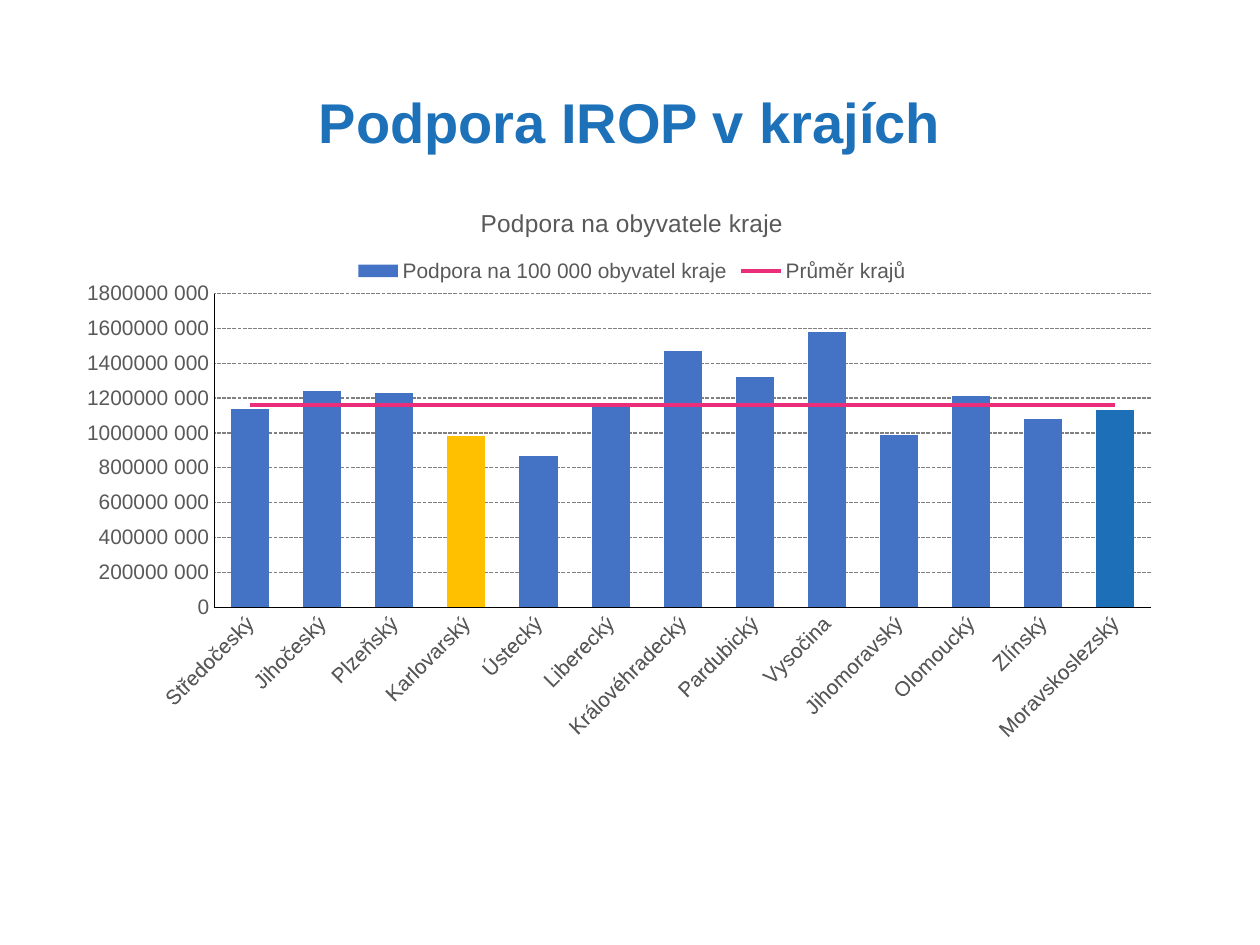
from pptx import Presentation
from pptx.chart.data import CategoryChartData
from pptx.dml.color import RGBColor
from pptx.enum.chart import XL_CHART_TYPE as CHART, XL_LEGEND_POSITION as LEGEND
from pptx.enum.chart import XL_MARKER_STYLE as MARKER, XL_TICK_MARK as TICK
from pptx.enum.dml import MSO_LINE
from pptx.enum.text import MSO_ANCHOR, PP_ALIGN
from pptx.oxml import parse_xml
from pptx.oxml.ns import nsdecls, qn
from pptx.util import Pt

PX = 914400 // 126
FONT = "Arial"
TITLE_BLUE = RGBColor(0x1D, 0x71, 0xB8)
BAR_BLUE = RGBColor(0x44, 0x72, 0xC4)
HOME_BLUE = RGBColor(0x1D, 0x70, 0xB8)
YELLOW = RGBColor(0xFF, 0xC0, 0x00)
PINK = RGBColor(0xEA, 0x2E, 0x7A)
TEXT_GRAY = RGBColor(0x59, 0x59, 0x59)
GRID_GRAY = RGBColor(0x80, 0x80, 0x80)
BLACK = RGBColor(0, 0, 0)

MILLION = 1_000_000
SUPPORT = {  # millions per 100 000 inhabitants
    "Středočeský": 1140, "Jihočeský": 1240, "Plzeňský": 1230,
    "Karlovarský": 980, "Ústecký": 870, "Liberecký": 1150,
    "Královéhradecký": 1470, "Pardubický": 1320, "Vysočina": 1580,
    "Jihomoravský": 990, "Olomoucký": 1210, "Zlínský": 1080,
    "Moravskoslezský": 1130,
}
AVERAGE = 1160
HIGHLIGHTS = {"Karlovarský": YELLOW, "Moravskoslezský": HOME_BLUE}


def set_font(font, size, color, bold=False):
    font.name, font.size, font.bold = FONT, Pt(size), bold
    font.color.rgb = color


def add_title(slide, x, y, w, h):
    sp = slide.shapes.title
    sp.left, sp.top, sp.width, sp.height = (v * PX for v in (x, y, w, h))
    tf = sp.text_frame
    tf.text = "Podpora IROP v krajích"
    tf.word_wrap = True
    tf.vertical_anchor = MSO_ANCHOR.MIDDLE
    p = tf.paragraphs[0]
    p.alignment = PP_ALIGN.CENTER
    p.line_spacing = 0.9
    set_font(p.font, 32, TITLE_BLUE, bold=True)


def move_last_series_to_line(chart):
    bars = chart.plots[0]._element
    ser = bars.findall(qn("c:ser"))[-1]
    for bar_only in ser.findall(qn("c:invertIfNegative")):
        ser.remove(bar_only)
    line = parse_xml(
        f'<c:lineChart {nsdecls("c")}><c:grouping val="standard"/>'
        '<c:varyColors val="0"/><c:marker val="1"/></c:lineChart>')
    line.insert(2, ser)
    for ax in bars.findall(qn("c:axId")):
        line.append(parse_xml(f'<c:axId {nsdecls("c")} val="{ax.get("val")}"/>'))
    bars.addnext(line)


def set_plot_layout(chart, x, y, w, h):
    """Place the inner plot area, in fractions of the chart."""
    area = chart.plots[0]._element.getparent()
    for old in area.findall(qn("c:layout")):
        area.remove(old)
    area.insert(0, parse_xml(
        f'<c:layout {nsdecls("c")}><c:manualLayout><c:layoutTarget val="inner"/>'
        '<c:xMode val="edge"/><c:yMode val="edge"/>'
        f'<c:x val="{x}"/><c:y val="{y}"/><c:w val="{w}"/><c:h val="{h}"/>'
        '</c:manualLayout></c:layout>'))


def format_axes(chart):
    cat, val = chart.category_axis, chart.value_axis
    for axis in (cat, val):
        axis.major_tick_mark = axis.minor_tick_mark = TICK.NONE
        set_font(axis.tick_labels.font, 12, TEXT_GRAY)
        axis.format.line.color.rgb = BLACK
        axis.format.line.width = Pt(0.75)
    body = cat._element.find(qn("c:txPr")).find(qn("a:bodyPr"))
    body.set("rot", "-2700000")
    val.minimum_scale, val.maximum_scale = 0, 1800 * MILLION
    val.major_unit = 200 * MILLION
    val.tick_labels.number_format = r"#\ ##0"
    val.tick_labels.number_format_is_linked = False
    grid = val.major_gridlines.format.line
    grid.color.rgb = GRID_GRAY
    grid.width = Pt(0.75)
    grid.dash_style = MSO_LINE.SQUARE_DOT


def format_series(chart):
    bars, line = chart.plots
    bars.gap_width = 89
    bars.vary_by_categories = False
    support, average = bars.series[0], line.series[0]
    support.format.fill.solid()
    support.format.fill.fore_color.rgb = BAR_BLUE
    for i, region in enumerate(SUPPORT):
        if region in HIGHLIGHTS:
            fill = support.points[i].format.fill
            fill.solid()
            fill.fore_color.rgb = HIGHLIGHTS[region]
    average.smooth = False
    average.marker.style = MARKER.NONE
    average.format.line.color.rgb = PINK
    average.format.line.width = Pt(2.75)


def add_support_chart(slide, x, y, w, h):
    data = CategoryChartData()
    data.categories = list(SUPPORT)
    data.add_series("Podpora na 100 000 obyvatel kraje",
                    [v * MILLION for v in SUPPORT.values()])
    data.add_series("Průměr krajů", [AVERAGE * MILLION] * len(SUPPORT))
    chart = slide.shapes.add_chart(
        CHART.COLUMN_CLUSTERED, *(v * PX for v in (x, y, w, h)), data).chart
    set_font(chart.font, 10, BLACK)

    chart.has_title = True
    tf = chart.chart_title.text_frame
    tf.text = "Podpora na obyvatele kraje"
    set_font(tf.paragraphs[0].font, 14, TEXT_GRAY)
    chart.chart_title.include_in_layout = False

    chart.has_legend = True
    chart.legend.position = LEGEND.TOP
    chart.legend.include_in_layout = False
    set_font(chart.legend.font, 12, TEXT_GRAY)

    move_last_series_to_line(chart)
    set_plot_layout(chart, 0.114, 0.187, 0.866, 0.54)
    format_axes(chart)
    format_series(chart)


def main():
    prs = Presentation()
    prs.slide_width, prs.slide_height = 1260 * PX, 945 * PX
    slide = prs.slides.add_slide(prs.slide_layouts[5])
    add_title(slide, 87, 34, 1086, 183)
    add_support_chart(slide, 87, 185, 1086, 581)
    prs.save("out.pptx")


if __name__ == "__main__":
    main()
